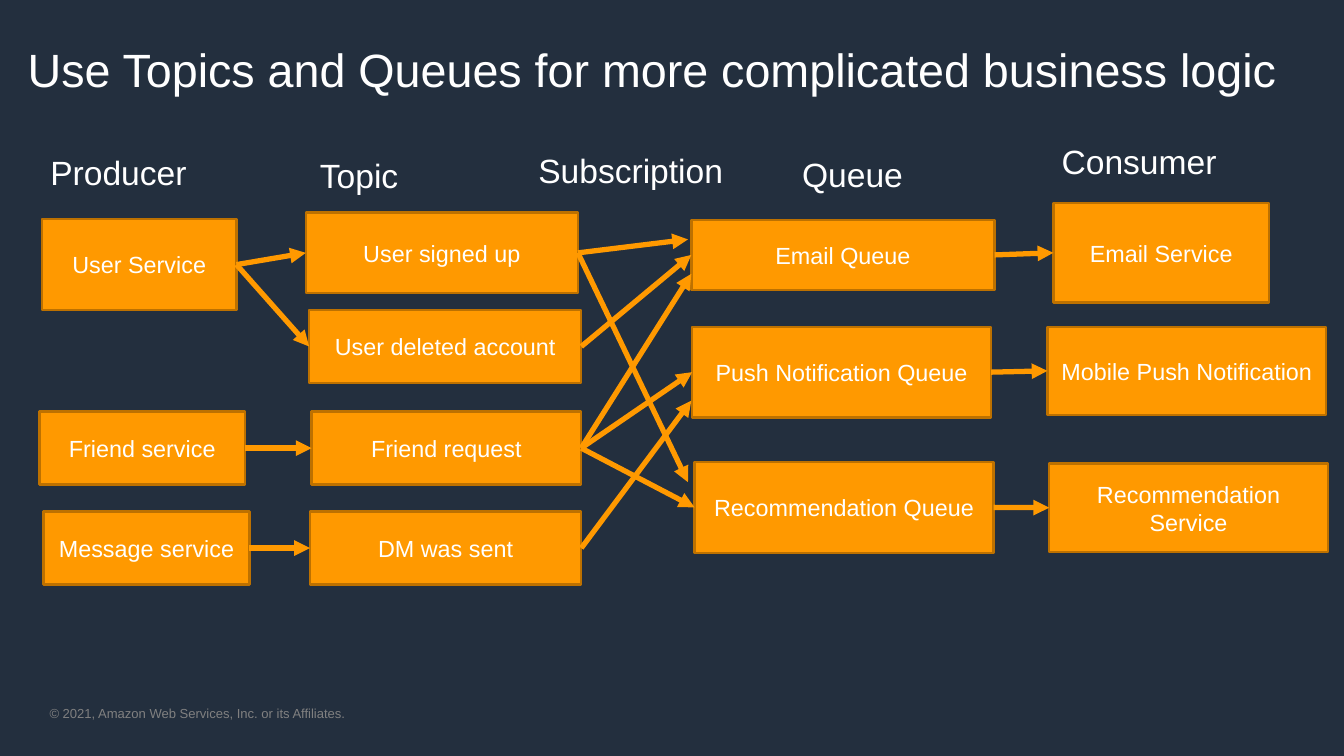
"""Builds a slide on routing events from producers through topics and queues to consumers."""
from dataclasses import dataclass

from lxml import etree
from pptx import Presentation
from pptx.dml.color import RGBColor
from pptx.enum.shapes import MSO_CONNECTOR, MSO_SHAPE
from pptx.enum.text import MSO_ANCHOR, PP_ALIGN
from pptx.oxml.ns import qn
from pptx.util import Pt

RECTANGLE = MSO_SHAPE.RECTANGLE
STRAIGHT = MSO_CONNECTOR.STRAIGHT
LEFT, CENTER = PP_ALIGN.LEFT, PP_ALIGN.CENTER
TOP, MIDDLE = MSO_ANCHOR.TOP, MSO_ANCHOR.MIDDLE
LEFT_SITE, RIGHT_SITE = 1, 3


@dataclass(frozen=True)
class Theme:
    font: str = "Arial"
    background: str = "232F3E"
    accent: str = "FF9900"
    outline: str = "BD7100"
    text: str = "FFFFFF"
    muted: str = "808080"
    title_size: float = 40
    heading_size: float = 28.8
    box_size: float = 20
    footer_size: float = 11.2
    outline_width: float = 2
    arrow_width: float = 4.5


THEME = Theme()
SLIDE_SIZE = (1152, 648)

TITLE = ("Use Topics and Queues for more complicated business logic", (16.6, 31.7, 1119, 55.4))
FOOTER = ("© 2021, Amazon Web Services, Inc. or its Affiliates.", (42.5, 604.8, 560, 13.7))

HEADINGS = [
    ("Producer", (36, 126.7, 135.4, 42)),
    ("Topic", (267.1, 129.6, 135.4, 42)),
    ("Subscription", (454.3, 124.6, 185, 42)),
    ("Queue", (680.4, 128.2, 135.4, 42)),
    ("Consumer", (902.9, 117.4, 185, 42)),
]

BOXES = {
    "User Service": (36, 187.9, 166.7, 77.8),
    "Friend service": (33.8, 352.8, 176.4, 62.6),
    "Message service": (37.4, 438.5, 176.4, 62.6),
    "User signed up": (262.1, 182.2, 233.3, 69.1),
    "User deleted account": (265, 265.7, 233.3, 62.6),
    "Friend request": (267.1, 352.8, 231.1, 62.6),
    "DM was sent": (265.7, 438.5, 232.6, 62.6),
    "Email Queue": (592.6, 188.6, 259.9, 59.8),
    "Push Notification Queue": (593.3, 280.1, 256.3, 77.8),
    "Recommendation Queue": (595.4, 396, 256.3, 77.8),
    "Email Service": (902.9, 174.2, 185, 85),
    "Mobile Push Notification": (897.8, 280.1, 239, 75.6),
    "Recommendation Service": (899.3, 397.4, 239, 75.6),
}

LINKS = [
    ("User Service", "User signed up"),
    ("User Service", "User deleted account"),
    ("Friend service", "Friend request"),
    ("Message service", "DM was sent"),
    ("User deleted account", "Email Queue"),
    ("Friend request", "Push Notification Queue"),
    ("Friend request", "Recommendation Queue"),
    ("Email Queue", "Email Service"),
    ("Push Notification Queue", "Mobile Push Notification"),
    ("Recommendation Queue", "Recommendation Service"),
]

FREE_END_LINKS = [
    ("User signed up", (589.7, 205.2)),
    ("User signed up", (589.7, 413.3)),
    ("Friend request", (592.6, 234.7)),
    ("DM was sent", (592.6, 343.4)),
]


def color(value):
    return RGBColor.from_string(value)


def write(shape, words, size, ink, align=LEFT, anchor=TOP):
    frame = shape.text_frame
    frame.word_wrap = True
    frame.vertical_anchor = anchor
    para = frame.paragraphs[0]
    para.alignment = align
    span = para.add_run()
    span.text = words
    span.font.name = THEME.font
    span.font.size = Pt(size)
    span.font.color.rgb = color(ink)
    return frame


def add_label(page, words, place, size, ink=THEME.text):
    label = page.shapes.add_textbox(*map(Pt, place))
    return write(label, words, size, ink)


def add_box(page, words, place):
    box = page.shapes.add_shape(RECTANGLE, *map(Pt, place))
    box.shadow.inherit = False
    box.fill.solid()
    box.fill.fore_color.rgb = color(THEME.accent)
    box.line.color.rgb = color(THEME.outline)
    box.line.width = Pt(THEME.outline_width)
    write(box, words, THEME.box_size, THEME.text, CENTER, MIDDLE)
    return box


def add_arrow(page, source, target=None, end=(0, 0)):
    arrow = page.shapes.add_connector(STRAIGHT, 0, 0, *map(Pt, end))
    arrow.begin_connect(source, RIGHT_SITE)
    if target is not None:
        arrow.end_connect(target, LEFT_SITE)
    arrow.line.color.rgb = color(THEME.accent)
    arrow.line.width = Pt(THEME.arrow_width)
    properties = arrow.element.spPr
    etree.SubElement(properties.find(qn("a:ln")), qn("a:tailEnd"), type="triangle")
    etree.SubElement(properties, qn("a:effectLst"))


def main():
    deck = Presentation()
    deck.slide_width, deck.slide_height = map(Pt, SLIDE_SIZE)
    page = deck.slides.add_slide(deck.slide_layouts[6])
    page.background.fill.solid()
    page.background.fill.fore_color.rgb = color(THEME.background)

    footer = add_label(page, *FOOTER, THEME.footer_size, THEME.muted)
    footer.margin_left = footer.margin_right = footer.margin_top = footer.margin_bottom = 0
    add_label(page, *TITLE, THEME.title_size)
    for words, place in HEADINGS:
        add_label(page, words, place, THEME.heading_size)

    boxes = {words: add_box(page, words, place) for words, place in BOXES.items()}
    for source, target in LINKS:
        add_arrow(page, boxes[source], boxes[target])
    for source, end in FREE_END_LINKS:
        add_arrow(page, boxes[source], end=end)

    deck.save("out.pptx")


if __name__ == "__main__":
    main()
